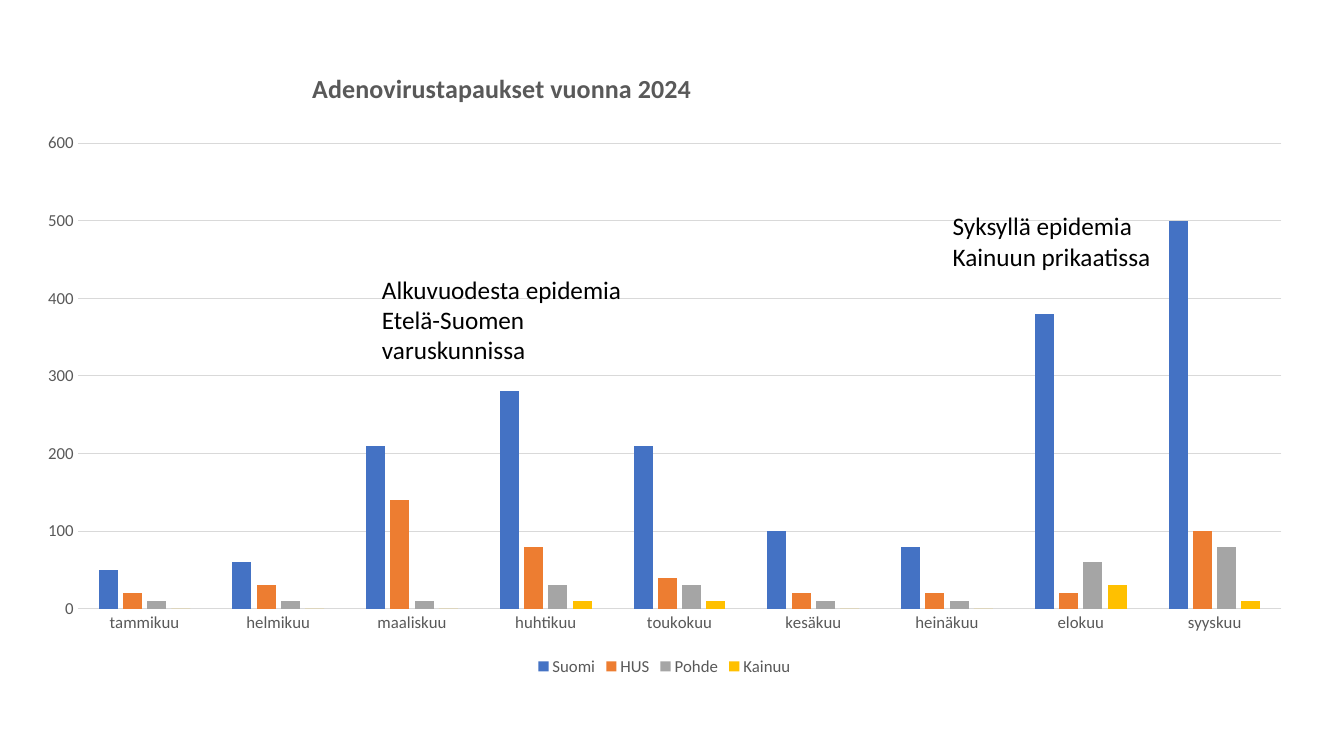
from lxml import etree
from pptx import Presentation
from pptx.chart.data import CategoryChartData
from pptx.dml.color import RGBColor
from pptx.enum.chart import XL_CHART_TYPE, XL_LEGEND_POSITION, XL_TICK_MARK
from pptx.enum.text import MSO_AUTO_SIZE
from pptx.oxml.ns import qn
from pptx.util import Inches, Pt

COLUMNS = XL_CHART_TYPE.COLUMN_CLUSTERED
BOTTOM = XL_LEGEND_POSITION.BOTTOM
NO_TICK = XL_TICK_MARK.NONE
GROW = MSO_AUTO_SIZE.SHAPE_TO_FIT_TEXT
GREY, RULE = "595959", "D9D9D9"
CHART_WIDTH, CHART_HEIGHT = 12.74, 6.21


def write(frame, text, size=18, color="000000", bold=False):
    run = frame.paragraphs[0].add_run()
    run.text = text
    run.font.name = "Calibri"
    run.font.size = Pt(size)
    run.font.bold = bold
    run.font.color.rgb = RGBColor.from_string(color)


def place(parent, index, **settings):
    for old in parent.findall(qn("c:layout")):
        parent.remove(old)
    layout = etree.Element(qn("c:layout"))
    manual = etree.SubElement(layout, qn("c:manualLayout"))
    for tag, value in settings.items():
        etree.SubElement(manual, qn("c:" + tag)).set("val", str(value))
    parent.insert(index, layout)


prs = Presentation()
prs.slide_width = Inches(13.33)
prs.slide_height = Inches(7.5)
slide = prs.slides.add_slide(prs.slide_layouts[6])

months = ["tammikuu", "helmikuu", "maaliskuu", "huhtikuu", "toukokuu",
          "kesäkuu", "heinäkuu", "elokuu", "syyskuu"]
regions = [
    ("Suomi", "4472C4", [50, 60, 210, 280, 210, 100, 80, 380, 500]),
    ("HUS", "ED7D31", [20, 30, 140, 80, 40, 20, 20, 20, 100]),
    ("Pohde", "A5A5A5", [10, 10, 10, 30, 30, 10, 10, 60, 80]),
    ("Kainuu", "FFC000", [0, 0, 0, 10, 10, 0, 0, 30, 10]),
]
cases = CategoryChartData()
cases.categories = months
for region, color, counts in regions:
    cases.add_series(region, counts)

chart = slide.shapes.add_chart(COLUMNS, Inches(0.22), Inches(0.54), Inches(CHART_WIDTH),
                               Inches(CHART_HEIGHT), cases).chart
chart.font.name = "Calibri"
chart.font.size = Pt(12)
chart.font.color.rgb = RGBColor.from_string(GREY)

chart.has_title = True
title = chart.chart_title
write(title.text_frame, "Adenovirustapaukset vuonna 2024", size=18.6, color=GREY, bold=True)
title.include_in_layout = False
place(title._element, 1, xMode="edge", yMode="edge",
      x=2.83 / CHART_WIDTH, y=0.11 / CHART_HEIGHT)
place(chart._chartSpace.chart.plotArea, 0, layoutTarget="inner",
      xMode="edge", yMode="edge", x=0.55 / CHART_WIDTH, y=0.88 / CHART_HEIGHT,
      w=11.94 / CHART_WIDTH, h=4.62 / CHART_HEIGHT)

chart.has_legend = True
chart.legend.position = BOTTOM
chart.legend.include_in_layout = False

plot = chart.plots[0]
plot.gap_width = 219
plot.overlap = -27
plot.vary_by_categories = False
for series, (region, color, counts) in zip(plot.series, regions):
    series.invert_if_negative = False
    series.format.fill.solid()
    series.format.fill.fore_color.rgb = RGBColor.from_string(color)

month_axis, count_axis = chart.category_axis, chart.value_axis
for axis in (month_axis, count_axis):
    axis.major_tick_mark = NO_TICK
    axis.minor_tick_mark = NO_TICK
count_axis.minimum_scale = 0
count_axis.maximum_scale = 600
count_axis.major_unit = 100
count_axis.has_major_gridlines = True
count_axis.format.line.fill.background()
for line in (month_axis.format.line, count_axis.major_gridlines.format.line):
    line.color.rgb = RGBColor.from_string(RULE)
    line.width = Pt(0.75)

remarks = [
    ("Syksyllä epidemia Kainuun prikaatissa", 9.35, 2.04, 2.29, 0.71),
    ("Alkuvuodesta epidemia Etelä-Suomen varuskunnissa", 3.69, 2.67, 2.64, 1.01),
]
for remark, left, top, width, height in remarks:
    frame = slide.shapes.add_textbox(Inches(left), Inches(top),
                                     Inches(width), Inches(height)).text_frame
    frame.word_wrap = True
    frame.auto_size = GROW
    write(frame, remark)

prs.save("out.pptx")
